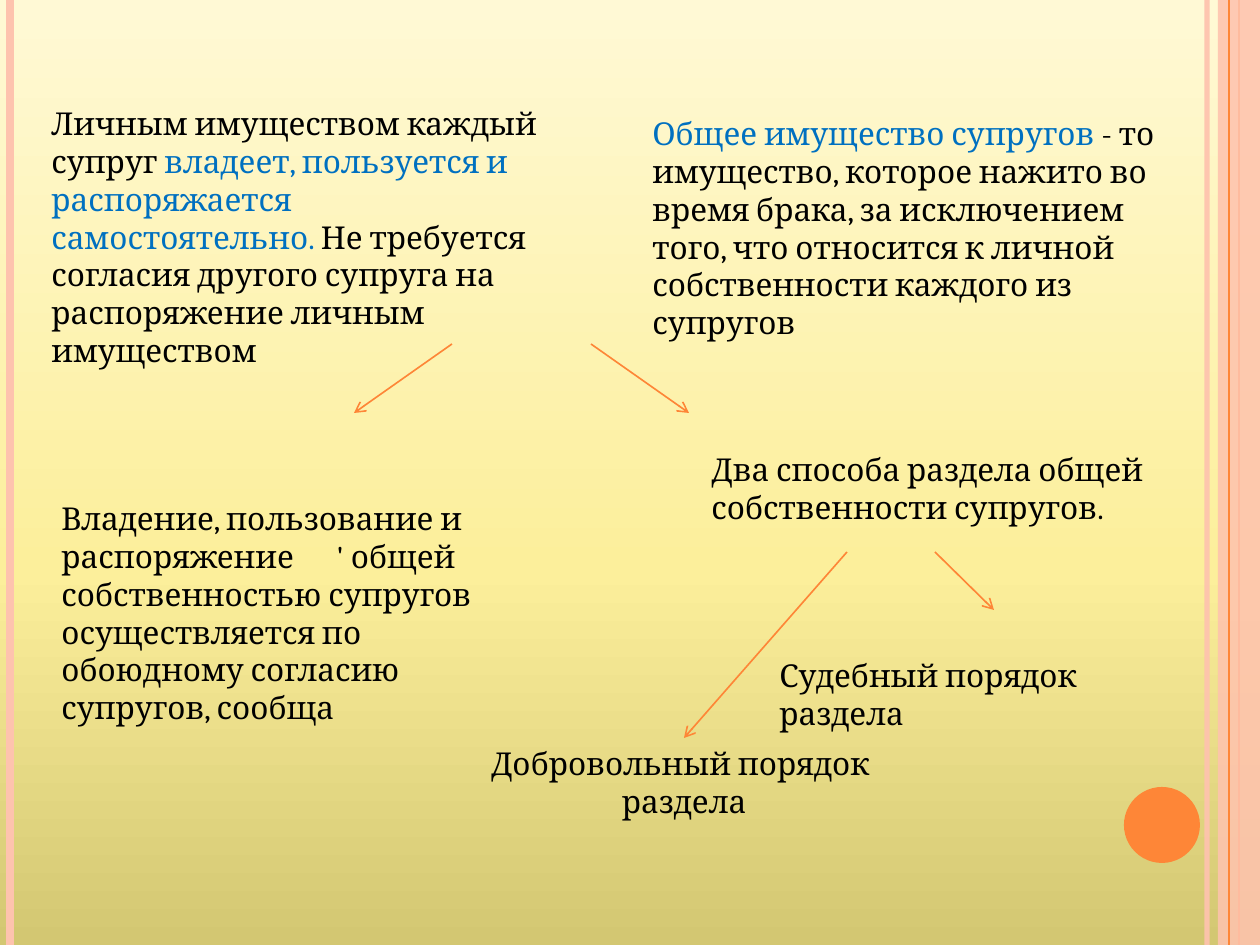
"""Build the slide on spouses' personal and common property."""
import copy
from dataclasses import dataclass
from typing import Optional

import lxml.etree
import pptx
import pptx.dml.color
import pptx.enum.shapes
import pptx.enum.text
import pptx.oxml.ns
import pptx.util

EMU_PER_PX = 914400 / 126
WIDTH, HEIGHT = 1260, 945
ORANGE, PEACH, BLACK, BLUE = "FE8637", "FEC3AE", "000000", "0070C0"
FONT = {"name": "Cambria", "size": pptx.util.Pt(18)}
FRAME = {"word_wrap": True, "auto_size": pptx.enum.text.MSO_AUTO_SIZE.SHAPE_TO_FIT_TEXT}
LEFT, CENTER = pptx.enum.text.PP_ALIGN.LEFT, pptx.enum.text.PP_ALIGN.CENTER
SHAPES = pptx.enum.shapes.MSO_SHAPE


@dataclass
class Stroke:
    x1: int
    y1: int
    x2: int
    y2: int
    color: str = ORANGE
    width: float = 0.94
    alpha: int = 100
    arrow: bool = True
    target: Optional[str] = None


@dataclass
class TextBlock:
    key: str
    box: tuple[int, int, int, int]
    paragraphs: list[list[tuple[str, str]]]
    align: pptx.enum.text.PP_ALIGN = LEFT
    tab: int = 0


def rail(x: int, color: str, width: float, alpha: int = 100) -> Stroke:
    return Stroke(x, 0, x, HEIGHT, color, width, alpha, arrow=False)


RAILS = [rail(1207, PEACH, 3, 93), rail(10, PEACH, 4.5), rail(1239, ORANGE, 1.5)]
INNER_RAIL = rail(1229, ORANGE, 0.75)

BLOCKS = [
    TextBlock("personal", (39, 98, 522, 242), [[
        ("Личным имуществом каждый супруг ", BLACK),
        ("владеет, пользуется и распоряжается самостоятельно. ", BLUE),
        ("Не требуется согласия другого супруга на распоряжение личным имуществом", BLACK)]]),
    TextBlock("common", (640, 108, 542, 242), [[
        ("Общее имущество супругов ", BLUE),
        ("- то имущество, которое нажито во время брака, за исключением того, "
         "что относится к личной собственности каждого из супругов", BLACK)]]),
    TextBlock("consent", (49, 493, 493, 204), [[
        ("Владение, пользование и распоряжение\t' общей собственностью супругов "
         "осуществляется по обоюдному согласию супругов, сообща", BLACK)]], tab=275),
    TextBlock("division", (699, 444, 473, 89), [[
        ("Два способа раздела общей собственности супругов.", BLACK)]]),
    TextBlock("voluntary", (473, 738, 422, 89), [
        [("Добровольный порядок ", BLACK)], [("раздела", BLACK)]], CENTER),
    TextBlock("judicial", (767, 650, 444, 50), [[("Судебный порядок раздела", BLACK)]]),
]

ARROWS = [
    Stroke(452, 344, 354, 413),
    Stroke(591, 344, 689, 413),
    Stroke(847, 552, 684, 738, target="voluntary"),
    Stroke(935, 552, 994, 610),
]


def px(n: int) -> pptx.util.Emu:
    return pptx.util.Emu(round(n * EMU_PER_PX))


def rgb(value: str) -> pptx.dml.color.RGBColor:
    return pptx.dml.color.RGBColor.from_string(value)


def apply(target, values: dict) -> None:
    for name, value in values.items():
        setattr(target, name, value)


def add_child(parent, tag: str, **attrs: str):
    return lxml.etree.SubElement(parent, pptx.oxml.ns.qn(tag), attrs)


def set_alpha(element, alpha: int) -> None:
    if alpha < 100:
        color = next(element.iter(pptx.oxml.ns.qn("a:srgbClr")))
        add_child(color, "a:alpha", val=str(alpha * 1000))


def paint_background(s) -> None:
    fill = s.background.fill
    fill.gradient()
    fill.gradient_angle = 90
    stops = next(s._element.iter(pptx.oxml.ns.qn("a:gsLst")))
    stops.append(copy.deepcopy(stops[0]))
    colors = [(0, "D3C772"), (0.4, "FCEF9B"), (1, "FFF9D5")]
    for stop, (position, color) in zip(fill.gradient_stops, colors):
        stop.position = position
        stop.color.rgb = rgb(color)


def add_stroke(s, stroke: Stroke, boxes: dict) -> None:
    ends = map(px, (stroke.x1, stroke.y1, stroke.x2, stroke.y2))
    c = s.shapes.add_connector(pptx.enum.shapes.MSO_CONNECTOR.STRAIGHT, *ends)
    c.line.color.rgb = rgb(stroke.color)
    c.line.width = pptx.util.Pt(stroke.width)
    sp_pr = c._element.spPr
    set_alpha(sp_pr, stroke.alpha)
    if stroke.arrow:
        add_child(sp_pr.find(pptx.oxml.ns.qn("a:ln")), "a:tailEnd", type="arrow")
    add_child(sp_pr, "a:effectLst")
    if stroke.target:
        c.end_connect(boxes[stroke.target], 0)


def add_solid(s, kind: SHAPES, box: tuple[int, int, int, int], color: str,
              alpha: int = 100) -> None:
    sp = s.shapes.add_shape(kind, *map(px, box))
    sp.shadow.inherit = False
    sp.fill.solid()
    sp.fill.fore_color.rgb = rgb(color)
    sp.line.fill.background()
    set_alpha(sp._element.spPr, alpha)


def add_text(s, block: TextBlock):
    sp = s.shapes.add_textbox(*map(px, block.box))
    tf = sp.text_frame
    apply(tf, FRAME)
    for i, runs in enumerate(block.paragraphs):
        p = tf.add_paragraph() if i else tf.paragraphs[0]
        p.alignment = block.align
        if block.tab:
            tabs = add_child(p._p.get_or_add_pPr(), "a:tabLst")
            add_child(tabs, "a:tab", pos=str(px(block.tab)), algn="l")
        for text, color in runs:
            r = p.add_run()
            r.text = text
            apply(r.font, FONT)
            r.font.color.rgb = rgb(color)
    return sp


def main() -> None:
    prs = pptx.Presentation()
    apply(prs, {"slide_width": px(WIDTH), "slide_height": px(HEIGHT)})
    s = prs.slides.add_slide(prs.slide_layouts[6])
    paint_background(s)
    for stroke in RAILS:
        add_stroke(s, stroke, {})
    add_solid(s, SHAPES.RECTANGLE, (1218, 0, 42, HEIGHT), PEACH, 87)
    add_stroke(s, INNER_RAIL, {})
    add_solid(s, SHAPES.OVAL, (1124, 787, 76, 76), ORANGE)
    boxes = {block.key: add_text(s, block) for block in BLOCKS}
    for arrow in ARROWS:
        add_stroke(s, arrow, boxes)
    prs.save("out.pptx")


if __name__ == "__main__":
    main()
